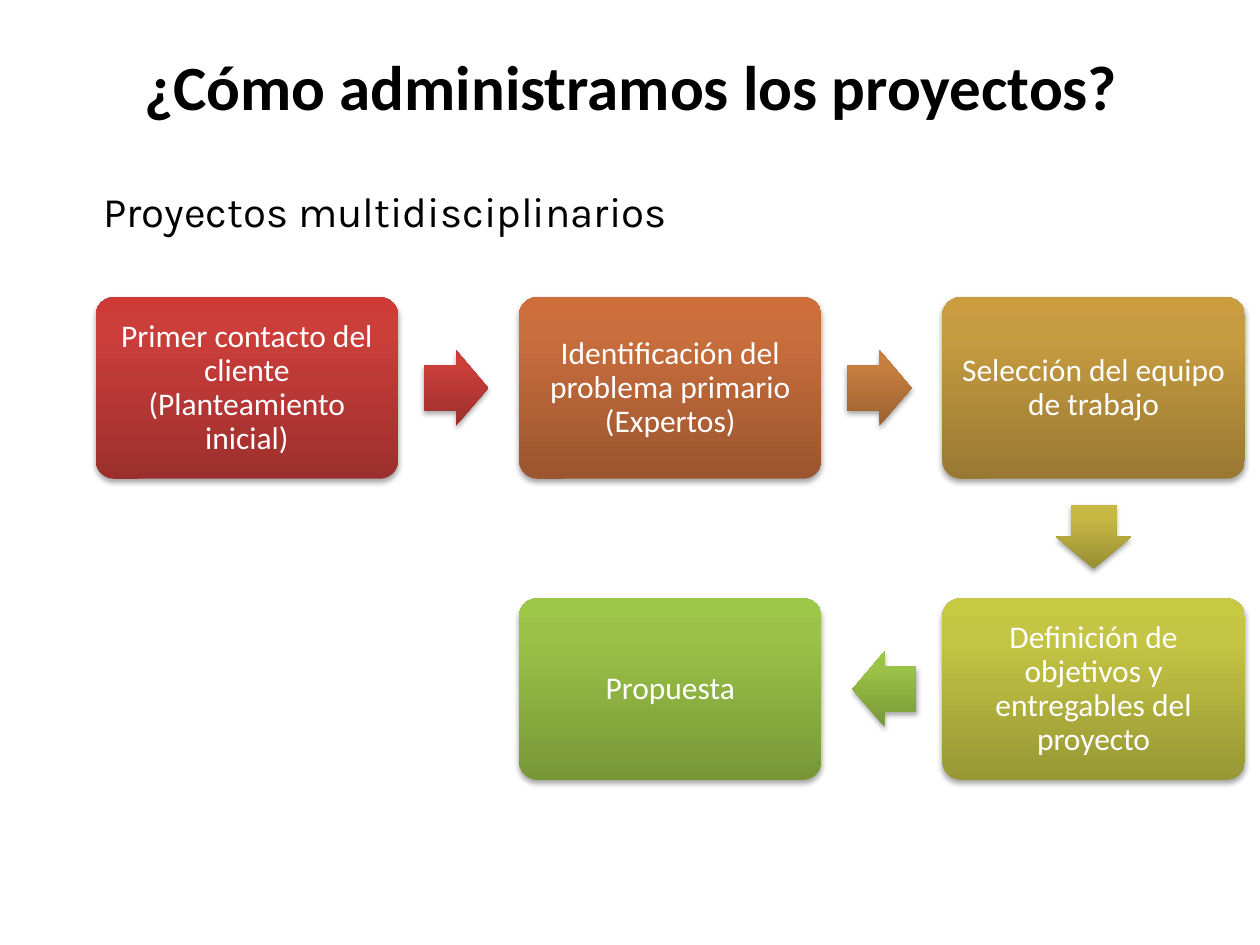
import math

from lxml import etree
from pptx import Presentation
from pptx.dml.color import RGBColor
from pptx.enum import shapes, text
from pptx.oxml import ns
from pptx.util import Inches, Pt

THEME = {
    "title": {"name": "Calibri", "size": Pt(36), "bold": True, "color": "000000"},
    "body": {"name": "Karla", "size": Pt(24), "bold": False, "color": "000000"},
    "step": {"name": "Calibri", "size": Pt(18), "bold": False, "color": "FFFFFF"},
    # Gradients from bottom to top, with stops at 0, 80 and 100 %
    "red": ("9C2F2D", "CB3E3A", "CE3B37"),
    "orange": ("9B552F", "C96E3D", "CD6E3B"),
    "amber": ("9A6130", "C87E3F", "CC7E3C"),
    "gold": ("997832", "C79C41", "CB9D3F"),
    "mustard": ("988E34", "C6B843", "C9BB41"),
    "lime": ("989835", "C5C545", "C8C942"),
    "green": ("779737", "9BC348", "9DC746"),
}


def write(p, words, style):
    r = p.add_run()
    r.text = words
    for key, value in THEME[style].items():
        if key == "color":
            r.font.color.rgb = RGBColor.from_string(value)
        else:
            setattr(r.font, key, value)


def add_part(kind, cx, cy, w, h, colors, adjustments):
    """Add a shape centred on (cx, cy) with a gradient and a soft shadow."""
    sp = slide.shapes.add_shape(kind, Inches(cx - w / 2), Inches(cy - h / 2),
                                Inches(w), Inches(h))
    for i, value in enumerate(adjustments):
        sp.adjustments[i] = value
    sp.line.fill.background()
    stops = "".join(f'<a:gs pos="{pos}000"><a:srgbClr val="{color}"/></a:gs>'
                    for pos, color in zip((0, 80, 100), THEME[colors]))
    fill = (f'<a:gradFill {ns.nsdecls("a")} rotWithShape="0"><a:gsLst>{stops}</a:gsLst>'
            '<a:lin ang="16200000" scaled="0"/></a:gradFill>')
    shadow = (f'<a:effectLst {ns.nsdecls("a")}><a:outerShdw blurRad="{Pt(3.1)}" '
              f'dist="{Pt(1.8)}" dir="5400000" rotWithShape="0"><a:srgbClr val="000000">'
              '<a:alpha val="35000"/></a:srgbClr></a:outerShdw></a:effectLst>')
    line = sp.line._get_or_add_ln()
    line.addprevious(etree.fromstring(fill))
    line.addnext(etree.fromstring(shadow))
    return sp


prs = Presentation()
prs.slide_width, prs.slide_height = Inches(10), Inches(7.5)
slide = prs.slides.add_slide(prs.slide_layouts[1])

# Title and subtitle
title, body = slide.placeholders
for ph, box in ((title, (0.01, -0.03, 10, 1.42)), (body, (0.72, 1.42, 9, 0.59))):
    for name, value in zip(("left", "top", "width", "height"), box):
        setattr(ph, name, Inches(value))

write(title.text_frame.paragraphs[0], "¿Cómo administramos los proyectos?", "title")

p = body.text_frame.paragraphs[0]
pPr = p._p.get_or_add_pPr()
pPr.set("marL", str(Inches(0.38)))
pPr.set("indent", str(Inches(-0.38)))
etree.SubElement(pPr, ns.qn("a:buNone"))
p.space_before = Pt(0)
write(p, "Proyectos multidisciplinarios", "body")

# Steps: text, column, row, box colours, colours of the arrow to the next step
steps = [
    ("Primer contacto del cliente (Planteamiento inicial)", 0, 0, "red", "red"),
    ("Identificación del problema primario (Expertos)", 1, 0, "orange", "amber"),
    ("Selección del equipo de trabajo", 2, 0, "gold", "mustard"),
    ("Definición de objetivos y entregables del proyecto", 2, 1, "lime", "green"),
    ("Propuesta", 1, 1, "green", None),
]
LEFT, TOP = 0.76, 2.36
BOX_W, BOX_H = 2.4, 1.44
COL, ROW = 3.36, 2.39
ARROW_W, ARROW_H, ARROW_REACH = 0.51, 0.6, 0.46

for i, (words, col, row, colors, arrow_colors) in enumerate(steps):
    cx = LEFT + col * COL + BOX_W / 2
    cy = TOP + row * ROW + BOX_H / 2

    # Box with its text
    sp = add_part(shapes.MSO_SHAPE.ROUNDED_RECTANGLE, cx, cy, BOX_W, BOX_H, colors, [0.1])
    tf = sp.text_frame
    frame = dict.fromkeys(("margin_left", "margin_right", "margin_top", "margin_bottom"),
                          Inches(0.11))
    frame.update(word_wrap=True, vertical_anchor=text.MSO_ANCHOR.MIDDLE)
    for name, value in frame.items():
        setattr(tf, name, value)
    p = tf.paragraphs[0]
    p.alignment = text.PP_ALIGN.CENTER
    p.line_spacing = 0.9
    write(p, words, "step")

    # Arrow pointing to the next box
    if arrow_colors:
        dx, dy = steps[i + 1][1] - col, steps[i + 1][2] - row
        arrow = add_part(shapes.MSO_SHAPE.RIGHT_ARROW,
                         cx + dx * (BOX_W / 2 + ARROW_REACH),
                         cy + dy * (BOX_H / 2 + ARROW_REACH),
                         ARROW_W, ARROW_H, arrow_colors, [0.6, 0.5])
        arrow.rotation = math.degrees(math.atan2(dy, dx))

prs.save("out.pptx")
